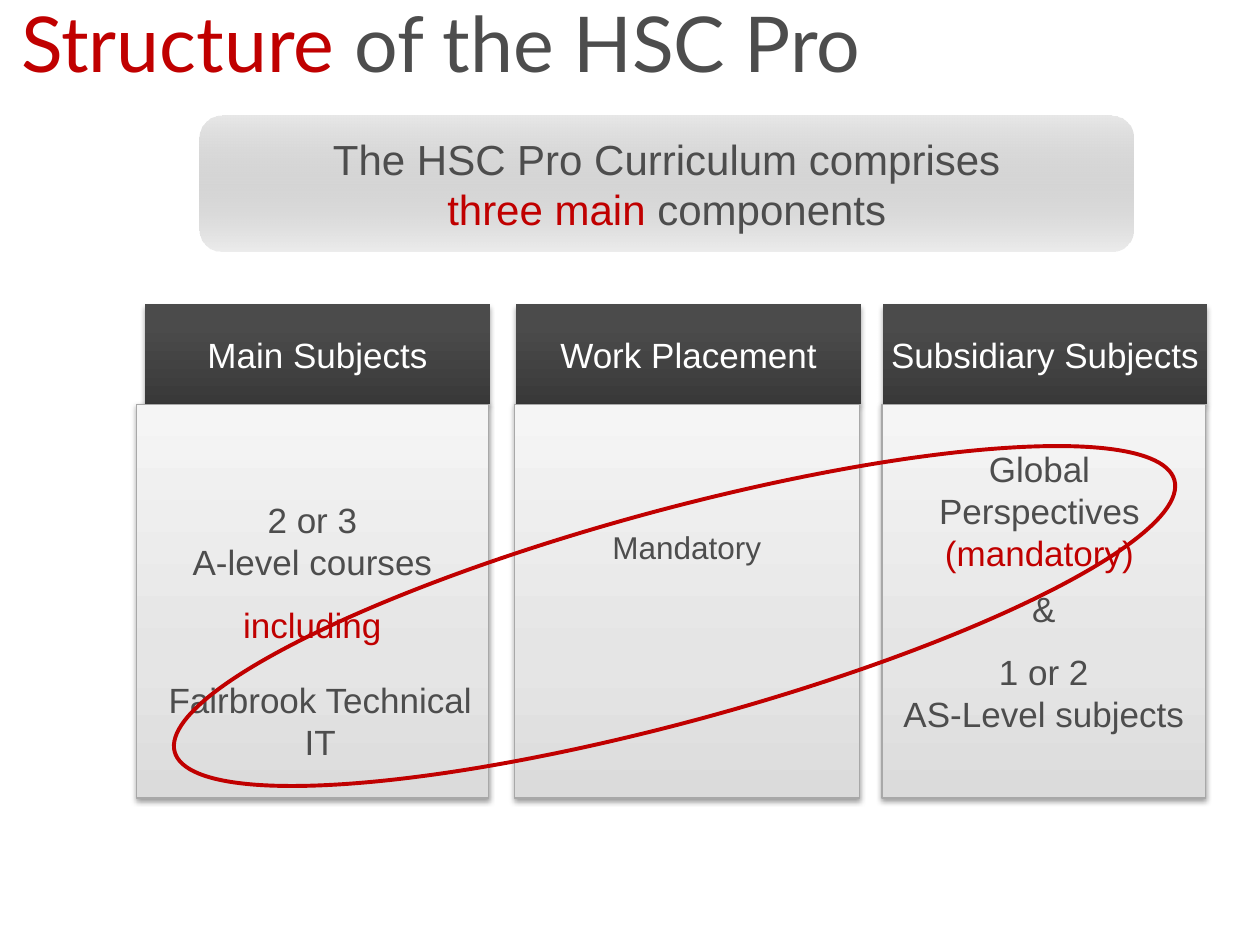
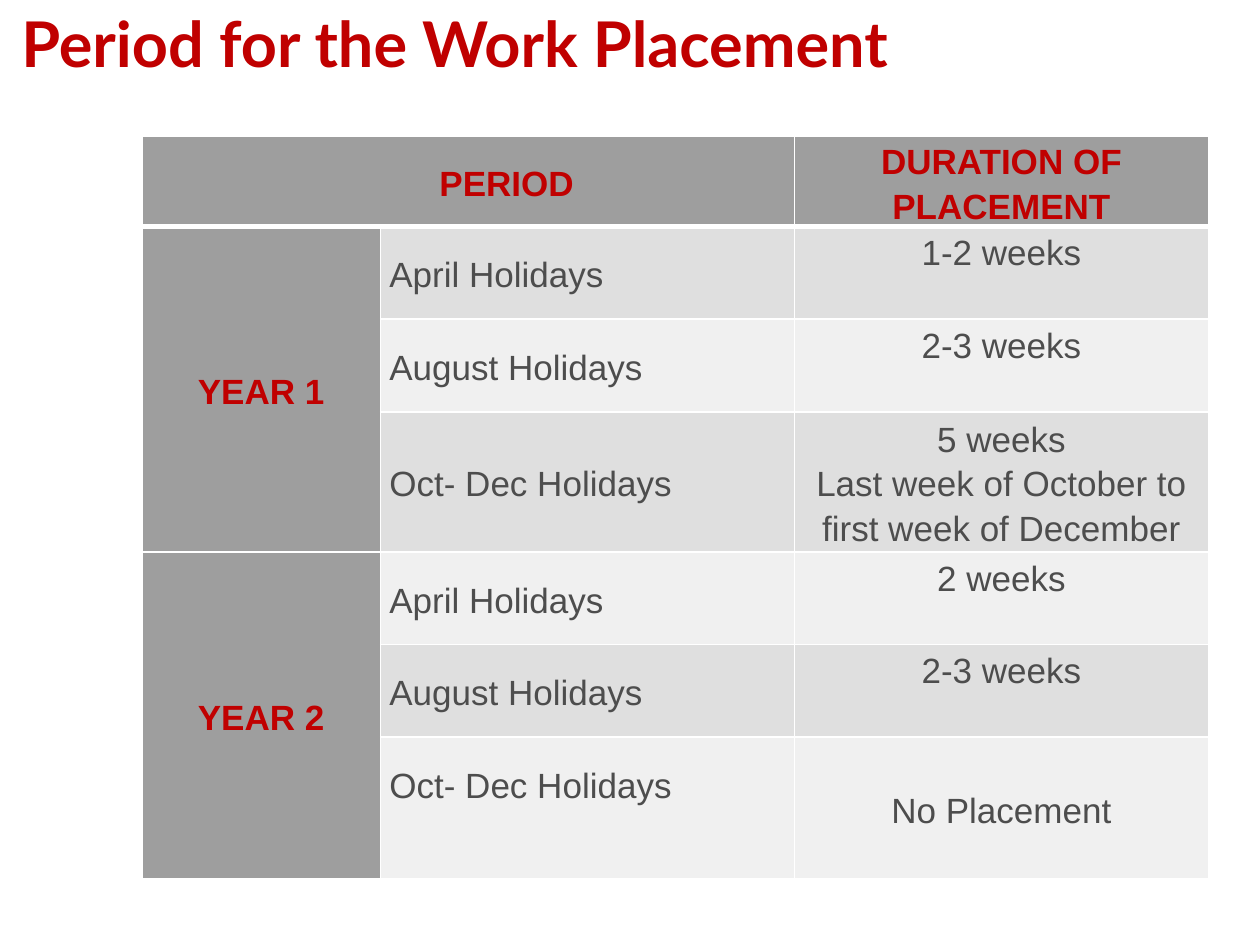
from lxml import etree
from pptx import Presentation
from pptx.dml.color import RGBColor
from pptx.enum.shapes import MSO_SHAPE
from pptx.enum.text import MSO_ANCHOR, MSO_AUTO_SIZE, PP_ALIGN
from pptx.oxml.ns import qn
from pptx.util import Pt

RECT, ROUND, OVAL = MSO_SHAPE.RECTANGLE, MSO_SHAPE.ROUNDED_RECTANGLE, MSO_SHAPE.OVAL
TOP, MIDDLE = MSO_ANCHOR.TOP, MSO_ANCHOR.MIDDLE
LEFT, CENTER = PP_ALIGN.LEFT, PP_ALIGN.CENTER
FIXED = MSO_AUTO_SIZE.NONE

HEX = {
    "red": "C00000", "text": "4D4D4D", "white": "FFFFFF", "edge": "A8A8A8",
    "head": "9E9E9E", "dark": "DFDFDF", "light": "F0F0F0",
}
BANNER = (90, [(0, "E7E7E7", 100), (100, "888888", 15)])
HEAD = (270, [(0, "393939", 100), (80, "4B4B4B", 100), (100, "4B4B4B", 100)])
PANEL = (270, [(0, "DBDBDB", 100), (35, "E5E5E5", 100), (100, "F5F5F5", 100)])


def rgb(name):
    return RGBColor.from_string(HEX[name])


def apply(item, values):
    for name, value in values.items():
        setattr(item, name, value)


def node(parent, tag, **values):
    item = etree.SubElement(parent, qn(tag))
    for name, value in values.items():
        item.set(name, str(value))
    return item


def write(frame, lines, size, face="Arial", bold=False, align=CENTER, space=None):
    for index, (runs, gap) in enumerate(lines):
        para = frame.paragraphs[0] if index == 0 else frame.add_paragraph()
        apply(para, {"alignment": align, "space_before": Pt(gap), "line_spacing": space})
        for text, color in runs:
            run = para.add_run()
            run.text = text
            apply(run.font, {"name": face, "size": Pt(size), "bold": bold})
            run.font.color.rgb = rgb(color)


def line(text, color="text", gap=0):
    return [(text, color)], gap


def blend(shape, grad):
    angle, stops = grad
    shape.fill.background()
    blank = shape._element.spPr.find(qn("a:noFill"))
    fill = etree.Element(qn("a:gradFill"), rotWithShape="1")
    group = node(fill, "a:gsLst")
    for place, color, alpha in stops:
        stop = node(group, "a:gs", pos=place * 1000)
        tone = node(stop, "a:srgbClr", val=color)
        node(tone, "a:alpha", val=alpha * 1000)
    node(fill, "a:lin", ang=angle * 60000, scaled=0)
    blank.getparent().replace(blank, fill)


def shade(shape, alpha, drop):
    effect = shape._element.spPr.find(qn("a:effectLst"))
    cast = node(effect, "a:outerShdw", blurRad=Pt(3.1), dist=Pt(drop),
                dir=90 * 60000, rotWithShape=0)
    tone = node(cast, "a:srgbClr", val="000000")
    node(tone, "a:alpha", val=alpha * 1000)


def block(slide, kind, box, grad=None, edge=None, width=0.75):
    shape = slide.shapes.add_shape(kind, *map(Pt, box))
    shape.shadow.inherit = False
    if grad:
        blend(shape, grad)
    else:
        shape.fill.background()
    if edge:
        shape.line.color.rgb = rgb(edge)
        shape.line.width = Pt(width)
    else:
        shape.line.fill.background()
    apply(shape.text_frame, {"word_wrap": False, "vertical_anchor": MIDDLE})
    return shape


def title(slide, runs, size, bold=False):
    shape = slide.shapes.title
    apply(shape, {"left": Pt(5), "top": Pt(3), "width": Pt(684), "height": Pt(42)})
    apply(shape.text_frame, {"auto_size": FIXED, "vertical_anchor": MIDDLE, "word_wrap": True})
    write(shape.text_frame, [(runs, 0)], size, "Lato", bold, LEFT)


def banner(slide, box):
    shape = block(slide, ROUND, box, BANNER)
    write(shape.text_frame, [
        line("The HSC Pro Curriculum comprises"),
        ([("three main", "red"), (" components", "text")], 0),
    ], 24)


def column(slide, box, shift, wide, name, lines, inset, size=20):
    left, top, width, height = box
    head = block(slide, RECT, (left + shift, top, wide, 57), HEAD)
    shade(head, 35, 1.8)
    write(head.text_frame, [line(name, "white")], 20)
    panel = block(slide, RECT, (left, top + 57, width, height - 57), PANEL, "edge")
    shade(panel, 38, 1.6)
    apply(panel.text_frame, {"vertical_anchor": TOP, "margin_top": Pt(inset)})
    write(panel.text_frame, lines, size)


def note(slide, box, lines):
    frame = slide.shapes.add_textbox(*map(Pt, box)).text_frame
    frame.word_wrap = True
    write(frame, lines, 20)


def ring(slide, box):
    shape = block(slide, OVAL, box, edge="red", width=2.25)
    shape.rotation = 344.8


def border(cell, below):
    props = cell._tc.get_or_add_tcPr()
    fill = props.find(qn("a:solidFill"))
    for side, width in (("L", 1), ("R", 1), ("T", 1), ("B", below)):
        edge = etree.Element(qn("a:ln" + side), w=str(Pt(width)))
        node(node(edge, "a:solidFill"), "a:srgbClr", val=HEX["white"])
        fill.addprevious(edge)


def paint(cell, fill, below=1):
    cell.fill.solid()
    cell.fill.fore_color.rgb = rgb(fill)
    border(cell, below)
    apply(cell, {"vertical_anchor": MIDDLE, "margin_left": Pt(5), "margin_right": Pt(5),
                 "margin_top": 0, "margin_bottom": 0})


def fill_in(cell, texts, color="text", bold=False, align=CENTER):
    write(cell.text_frame, [line(text, color) for text in texts], 20,
          bold=bold, align=align, space=1.15)


def grid(slide, box, years):
    widths = (136.5, 236.5, 236.5)
    heights = (51, 53, 53, 80, 53, 53, 81)
    frame = slide.shapes.add_table(len(heights), len(widths), *map(Pt, box))
    table = frame.table
    apply(table, {"first_row": False, "horz_banding": False})
    for col, width in zip(table.columns, widths):
        col.width = Pt(width)
    for row, height in zip(table.rows, heights):
        row.height = Pt(height)
    for row in range(len(heights)):
        for col in range(len(widths)):
            band = "dark" if row % 2 else "light"
            paint(table.cell(row, col), "head" if row * col == 0 else band,
                  1 if row else 3)
    table.cell(0, 0).merge(table.cell(0, 1))
    table.cell(0, 0).margin_left = Pt(49)
    fill_in(table.cell(0, 0), ["PERIOD"], "red", True)
    fill_in(table.cell(0, 2), ["DURATION OF PLACEMENT"], "red", True)
    for index, (year, terms) in enumerate(years):
        first = 1 + index * len(terms)
        table.cell(first, 0).merge(table.cell(first + len(terms) - 1, 0))
        fill_in(table.cell(first, 0), [year], "red", True)
        for row, (period, span) in enumerate(terms, first):
            fill_in(table.cell(row, 1), [period], align=LEFT)
            fill_in(table.cell(row, 2), span)
            if row - first < 2:
                apply(table.cell(row, 2), {"vertical_anchor": TOP, "margin_top": Pt(1)})
    table.cell(6, 1).margin_bottom = Pt(28)


def outline(slide):
    title(slide, [("Structure", "red"), (" of the HSC Pro", "text")], 44)
    banner(slide, (114, 66, 534, 78))
    top, height = 174, 282
    column(slide, (78, top, 201, height), 5, 197, "Main Subjects", [
        line("2 or 3"), line("A-level courses"), line("including", "red", 12)], 54)
    column(slide, (504, top, 185, height), 0.7, 185, "Subsidiary Subjects", [
        line("&"), line("1 or 2", gap=12), line("AS-Level subjects")], 104.5)
    column(slide, (294, top, 197, height), 1, 197, "Work Placement",
           [line("Mandatory")], 71, 18)
    note(slide, (84, 384, 198, 55), [line("Fairbrook Technical IT")])
    note(slide, (516, 252, 156, 109), [
        line("Global Perspectives"), line("(mandatory)", "red")])
    ring(slide, (89.5, 291.5, 592, 121))


def periods(slide):
    title(slide, [("Period for the Work Placement", "red")], 36, True)
    april, august, winter = "April Holidays", "August Holidays", "Oct- Dec Holidays"
    grid(slide, (81, 78, 609.5, 424), [
        ("YEAR 1", [
            (april, ["1-2 weeks"]), (august, ["2-3 weeks"]),
            (winter, ["5 weeks", "Last week of October to first week of December"])]),
        ("YEAR 2", [
            (april, ["2 weeks"]), (august, ["2-3 weeks"]),
            (winter, ["No Placement"])]),
    ])


def main():
    deck = Presentation()
    apply(deck, {"slide_width": Pt(720), "slide_height": Pt(540)})
    for build in (outline, periods):
        build(deck.slides.add_slide(deck.slide_layouts[5]))
    deck.save("out.pptx")


if __name__ == "__main__":
    main()
